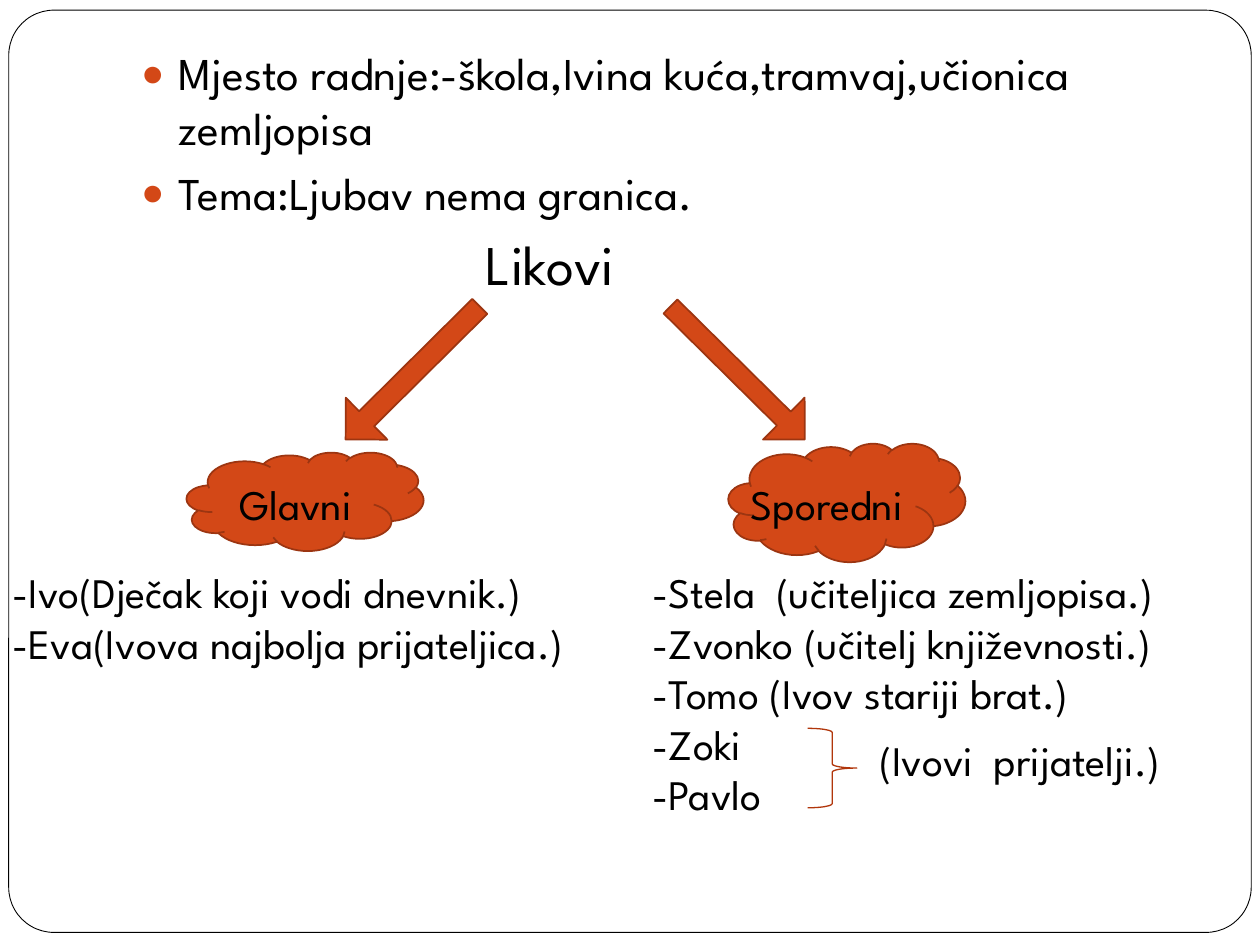
from dataclasses import dataclass

from lxml import etree
from pptx import Presentation
from pptx.dml.color import RGBColor
from pptx.enum.shapes import MSO_SHAPE
from pptx.enum.text import MSO_ANCHOR, MSO_AUTO_SIZE
from pptx.oxml.ns import qn
from pptx.util import Pt

FRAME = MSO_SHAPE.ROUNDED_RECTANGLE
ARROW = MSO_SHAPE.UP_ARROW
CLOUD = MSO_SHAPE.CLOUD
BRACE = MSO_SHAPE.RIGHT_BRACE
TOP = MSO_ANCHOR.TOP
NO_FIT = MSO_AUTO_SIZE.NONE
TITLE_AND_CONTENT = 1

FONT = "League Spartan"
BLACK, WHITE, ORANGE = "000000", "FFFFFF", "D34817"
DARK_ORANGE, BRACE_RED = "9C3511", "B1360B"


@dataclass
class Area:
    left: float
    top: float
    width: float
    height: float

    def lengths(self) -> list:
        return [Pt(value) for value in (self.left, self.top, self.width, self.height)]


@dataclass
class Arrow:
    area: Area
    rotation: float
    shaft: float


@dataclass
class Label:
    area: Area
    lines: list[str]


@dataclass
class Branch:
    cloud: Area
    label: Label


@dataclass
class Point:
    text: str
    size: float
    margin: float
    hanging: float
    bullet: bool


def color(value: str) -> RGBColor:
    return RGBColor.from_string(value)


def format_span(span, size: float) -> None:
    for name, value in {"name": FONT, "size": Pt(size), "bold": False}.items():
        setattr(span.font, name, value)
    span.font.color.rgb = color(BLACK)


def format_frame(text_frame) -> None:
    settings = {"word_wrap": True, "auto_size": NO_FIT, "vertical_anchor": TOP}
    for name, value in settings.items():
        setattr(text_frame, name, value)


def draw_shape(shapes, kind, area: Area, fill: str | None, line: str,
               weight: float, adjustments: tuple = ()):
    shape = shapes.add_shape(kind, *area.lengths())
    shape.shadow.inherit = False
    if fill is None:
        shape.fill.background()
    else:
        shape.fill.solid()
        shape.fill.fore_color.rgb = color(fill)
    shape.line.color.rgb = color(line)
    shape.line.width = Pt(weight)
    for index, value in enumerate(adjustments):
        shape.adjustments[index] = value
    return shape


def draw_label(shapes, label: Label) -> None:
    box = shapes.add_textbox(*label.area.lengths())
    format_frame(box.text_frame)
    for index, line in enumerate(label.lines):
        para = box.text_frame.paragraphs[0] if index == 0 else box.text_frame.add_paragraph()
        span = para.add_run()
        span.text = line
        format_span(span, 24)


def set_bullet(properties, visible: bool) -> None:
    if not visible:
        etree.SubElement(properties, qn("a:buNone"))
        return
    bullet_color = etree.SubElement(properties, qn("a:buClr"))
    etree.SubElement(bullet_color, qn("a:srgbClr"), val=ORANGE)
    etree.SubElement(properties, qn("a:buSzPct"), val="85000")
    etree.SubElement(properties, qn("a:buChar"), char="●")


def fill_body(body, area: Area, points: list[Point]) -> None:
    for name, value in zip(("left", "top", "width", "height"), area.lengths()):
        setattr(body, name, value)
    format_frame(body.text_frame)
    for index, point in enumerate(points):
        para = body.text_frame.paragraphs[0] if index == 0 else body.text_frame.add_paragraph()
        para.space_before = Pt(5.8)
        properties = para._p.get_or_add_pPr()
        properties.set("marL", str(Pt(point.margin)))
        properties.set("indent", str(Pt(-point.hanging)))
        set_bullet(properties, point.bullet)
        span = para.add_run()
        span.text = point.text
        format_span(span, point.size)


POINTS = [
    Point("Mjesto radnje:-škola,Ivina kuća,tramvaj,učionica zemljopisa", 26, 21.6, 21.6, True),
    Point("Tema:Ljubav nema granica.", 26, 21.6, 21.6, True),
    Point("Likovi", 32, 197, 0, False),
]
ARROWS = [
    Arrow(Area(218.9, 159.1, 33.8, 108), 225.2, 0.358),
    Arrow(Area(404.6, 159.1, 33.8, 108), 134.7, 0.332),
]
BRANCHES = [
    Branch(Area(106.6, 258.5, 135.4, 56.2), Label(Area(129.6, 270, 106.6, 36), ["Glavni"])),
    Branch(Area(416.2, 253.4, 135.4, 67.7), Label(Area(421.9, 270, 151.9, 36), ["Sporedni"])),
]
CHARACTERS = [
    Label(Area(0, 320.4, 405.4, 65.5),
          ["-Ivo(Dječak koji vodi dnevnik.)", "-Eva(Ivova najbolja prijateljica.)"]),
    Label(Area(365.8, 320.4, 376.6, 152.6),
          ["-Stela  (učiteljica zemljopisa.)", "-Zvonko (učitelj književnosti.)",
           "-Tomo (Ivov stariji brat.)", "-Zoki", "-Pavlo"]),
]
FRIENDS = Label(Area(495.4, 416.2, 247.7, 36), ["(Ivovi  prijatelji.)"])


def main() -> None:
    deck = Presentation()
    deck.slide_width, deck.slide_height = Pt(720), Pt(540)
    page = deck.slides.add_slide(deck.slide_layouts[TITLE_AND_CONTENT])
    shapes = page.shapes

    # The page has no title
    title = shapes.title._element
    title.getparent().remove(title)

    # Rounded page frame, sent behind the text
    frame = draw_shape(shapes, FRAME, Area(5, 5.8, 710, 527), WHITE, BLACK, 0.5, (0.049,))
    shapes._spTree.insert(2, frame._element)

    # Setting, theme and heading of the diagram
    fill_body(page.placeholders[1], Area(73.4, 22.3, 612, 451.4), POINTS)

    # Arrows from the heading to both branches
    for arrow in ARROWS:
        shape = draw_shape(shapes, ARROW, arrow.area, ORANGE, DARK_ORANGE, 1, (arrow.shaft, 0.5))
        shape.rotation = arrow.rotation

    # Clouds with their labels
    for branch in BRANCHES:
        group = shapes.add_group_shape()
        draw_shape(group.shapes, CLOUD, branch.cloud, ORANGE, DARK_ORANGE, 1)
        draw_label(group.shapes, branch.label)

    # Character lists, and the brace that joins the friends
    for label in CHARACTERS:
        draw_label(shapes, label)
    draw_shape(shapes, BRACE, Area(461.5, 416.2, 28.1, 45.4), None, BRACE_RED, 0.75)
    draw_label(shapes, FRIENDS)

    deck.save("out.pptx")


if __name__ == "__main__":
    main()
